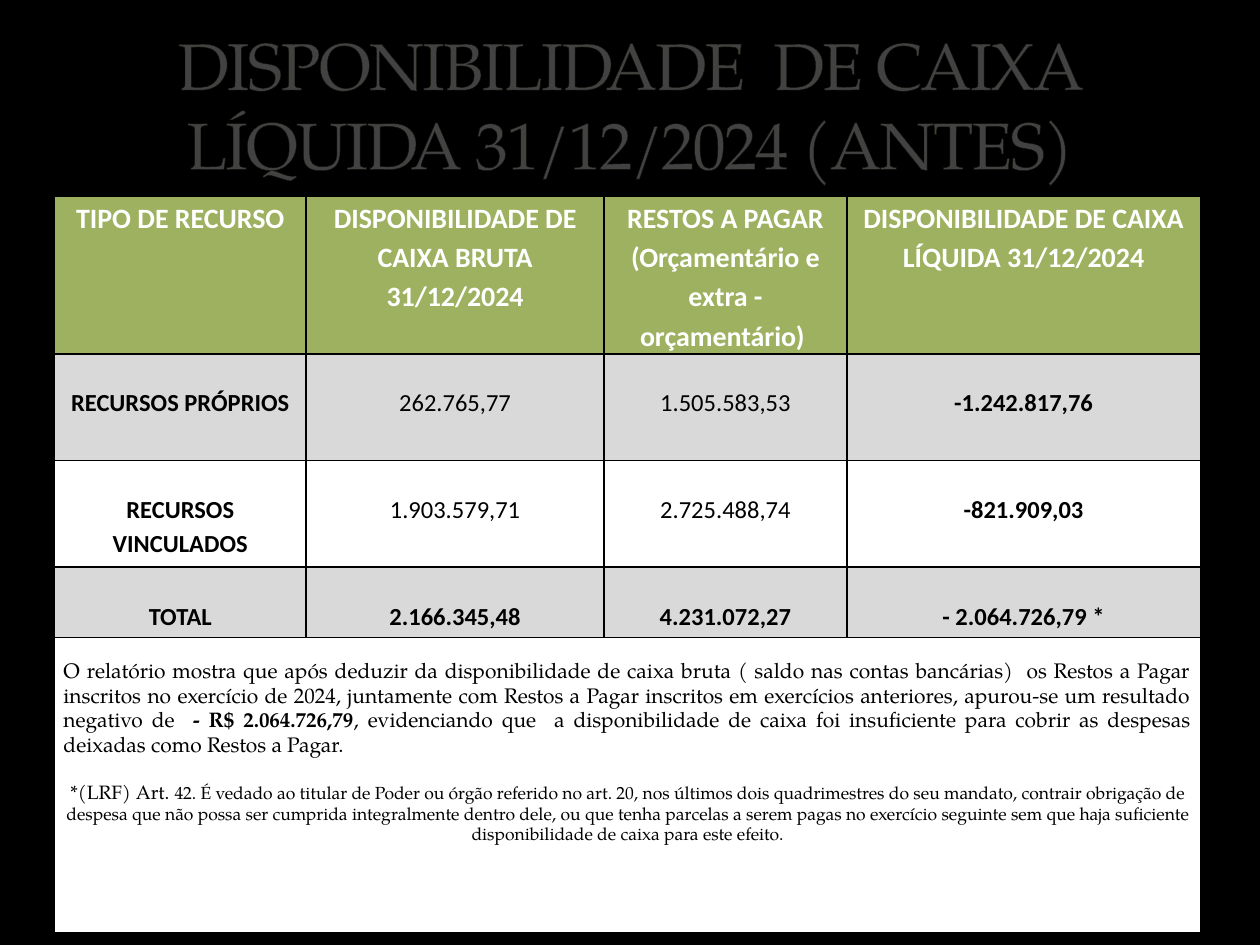
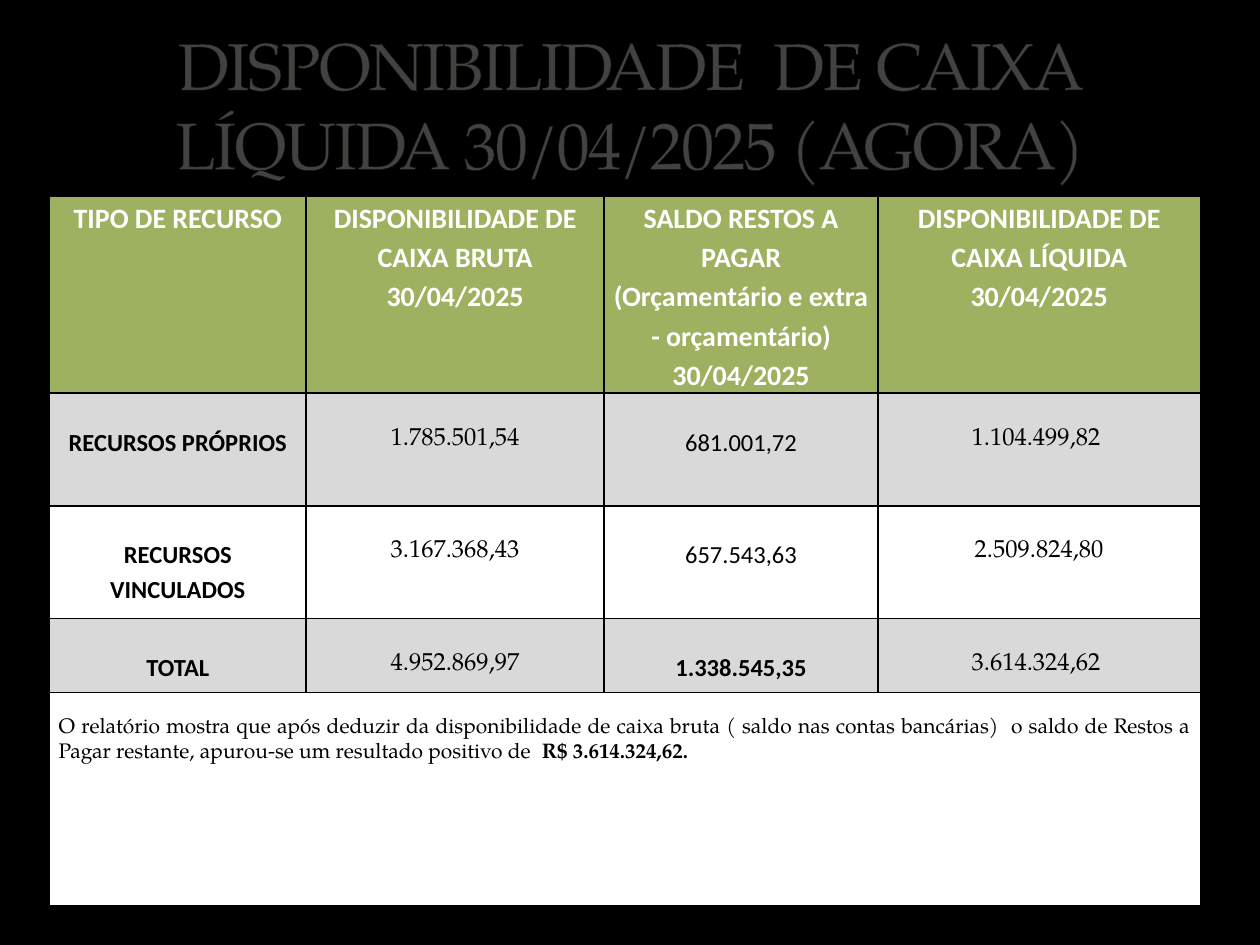
from lxml import etree
from pptx import Presentation
from pptx import util as u
from pptx.dml.color import RGBColor
from pptx.enum import text
from pptx.oxml.ns import qn

INK = {
    "night": "000000",
    "white": "FFFFFF",
    "green": "9EB160",
    "gray": "D9D9D9",
    "olive": "3C4422",
}
SANS = "Calibri"
SERIF = "TeX Gyre Pagella"
MID = text.PP_ALIGN.CENTER
FULL = text.PP_ALIGN.JUSTIFY
LABELS = ["RECURSOS PRÓPRIOS", "RECURSOS VINCULADOS", "TOTAL"]


def color(name):
    return RGBColor.from_string(INK[name])


def style(font, size, ink, face=SANS, bold=False):
    font.size = u.Pt(size)
    font.name = face
    font.bold = bold
    font.color.rgb = color(ink)


def add_fill(parent, ink, alpha=None):
    fill = etree.SubElement(parent, qn("a:solidFill"))
    tone = etree.SubElement(fill, qn("a:srgbClr"), val=INK[ink])
    if alpha:
        etree.SubElement(tone, qn("a:alpha"), val=str(alpha * 1000))


def add_title(slide, words):
    title = slide.shapes.title
    title.left, title.top = u.Cm(1.27), u.Cm(0.43)
    title.width, title.height = u.Cm(22.86), u.Cm(3.38)
    frame = title.text_frame
    frame.word_wrap = True
    frame.auto_size = text.MSO_AUTO_SIZE.NONE
    frame.vertical_anchor = text.MSO_ANCHOR.BOTTOM
    para = frame.paragraphs[0]
    para.alignment = MID
    run = para.add_run()
    run.text = words
    style(run.font, 37.8, "white", SERIF)
    props = run.font._element
    props.set("spc", "-100")
    line = etree.Element(qn("a:ln"), w="3175")
    add_fill(line, "olive", 25)
    props.insert(0, line)


def set_cell(cell, ink, top=0):
    cell.fill.solid()
    cell.fill.fore_color.rgb = color(ink)
    cell.margin_left = cell.margin_right = u.Cm(0.18)
    cell.margin_top, cell.margin_bottom = u.Cm(top), 0
    props = cell._tc.get_or_add_tcPr()
    for i, side in enumerate(("lnL", "lnR", "lnT", "lnB")):
        line = etree.Element(qn("a:" + side), w="12700")
        add_fill(line, "night")
        props.insert(i, line)


def add_para(frame, first, align=MID):
    para = frame.paragraphs[0] if first else frame.add_paragraph()
    para.alignment = align
    para.line_spacing = 1.15
    return para


def fill_head(cell, words):
    set_cell(cell, "green")
    for i, part in enumerate(words.split("\n")):
        para = add_para(cell.text_frame, i == 0)
        para.text = part
        style(para.font, 16, "white", bold=True)


def fill_value(cell, words, ink, face, bold):
    set_cell(cell, ink, 0.61)
    para = add_para(cell.text_frame, True)
    para.text = words
    style(para.font, 14, "night", face, bold)


def fill_note(cell, notes):
    set_cell(cell, "white", 0.46)
    for i, (align, runs) in enumerate(notes):
        para = add_para(cell.text_frame, i == 0, align)
        if i:
            para.space_before = u.Pt(14)
        for words, size, bold in runs:
            run = para.add_run()
            run.text = words
            style(run.font, size, "night", SERIF, bold)


def add_grid(slide, left, cols, rows, heads, values, look, notes):
    shape = slide.shapes.add_table(
        len(rows), len(cols), u.Cm(left), u.Cm(3.96),
        u.Cm(sum(cols)), u.Cm(sum(rows)))
    grid = shape.table
    for col, width in zip(grid.columns, cols):
        col.width = u.Cm(width)
    for row, height in zip(grid.rows, rows):
        row.height = u.Cm(height)
    for c, head in enumerate(heads):
        fill_head(grid.cell(0, c), head)
    for r, (label, line) in enumerate(zip(LABELS, values), 1):
        ink = "gray" if r % 2 else "white"
        for c, words in enumerate([label] + line):
            face, bold = look(r, c)
            fill_value(grid.cell(r, c), words, ink, face, bold)
    last = len(rows) - 1
    grid.cell(last, 0).merge(grid.cell(last, len(cols) - 1))
    fill_note(grid.cell(last, 0), notes)


def look_before(r, c):
    return SANS, c in (0, 3) or r == 3


def look_now(r, c):
    face = SANS if c in (0, 2) else SERIF
    return face, c == 0 or (r == 3 and c == 2)


def add_page(deck, title, **grid):
    slide = deck.slides.add_slide(deck.slide_layouts[5])
    slide.background.fill.solid()
    slide.background.fill.fore_color.rgb = color("night")
    add_title(slide, title)
    add_grid(slide, **grid)


def main():
    deck = Presentation()
    deck.slide_width, deck.slide_height = u.Cm(25.4), u.Cm(19.05)
    add_page(
        deck, "DISPONIBILIDADE  DE CAIXA LÍQUIDA 31/12/2024 (ANTES)",
        left=1.1, cols=[5.07, 6.01, 4.89, 7.13],
        rows=[3, 2.15, 2.15, 1.42, 5.94],
        heads=["TIPO DE RECURSO",
               "DISPONIBILIDADE DE CAIXA BRUTA 31/12/2024",
               "RESTOS A PAGAR\n(Orçamentário e extra - orçamentário) ",
               "DISPONIBILIDADE DE CAIXA LÍQUIDA 31/12/2024"],
        values=[["262.765,77", "1.505.583,53", "-1.242.817,76"],
                ["1.903.579,71", "2.725.488,74", "-821.909,03"],
                ["2.166.345,48", "4.231.072,27", "- 2.064.726,79 *"]],
        look=look_before,
        notes=[
            (FULL, [
                ("O relatório mostra que após deduzir da disponibilidade de "
                 "caixa bruta ( saldo nas contas bancárias)  os Restos a Pagar "
                 "inscritos no exercício de 2024, juntamente com Restos a Pagar "
                 "inscritos em exercícios anteriores, apurou-se um resultado "
                 "negativo de  ", 12, False),
                ("- R$ 2.064.726,79", 12, True),
                (", evidenciando que  a disponibilidade de caixa foi "
                 "insuficiente para cobrir as despesas deixadas como Restos a "
                 "Pagar.", 12, False)]),
            (MID, [
                ("*(LRF) Art. ", 11, False),
                ("42. É vedado ao titular de Poder ou órgão referido no art. "
                 "20, nos últimos dois quadrimestres do seu mandato, contrair "
                 "obrigação de despesa que não possa ser cumprida "
                 "integralmente dentro dele, ou que tenha parcelas a serem "
                 "pagas no exercício seguinte sem que haja suficiente "
                 "disponibilidade de caixa para este efeito.", 10, False)])])
    add_page(
        deck, "DISPONIBILIDADE  DE CAIXA LÍQUIDA 30/04/2025 (AGORA)",
        left=1, cols=[5.17, 6.01, 5.52, 6.5],
        rows=[2.34, 2.27, 2.27, 1.49, 4.3],
        heads=["TIPO DE RECURSO",
               "DISPONIBILIDADE DE CAIXA BRUTA 30/04/2025",
               "SALDO RESTOS A PAGAR\n"
               "(Orçamentário e extra - orçamentário) 30/04/2025",
               "DISPONIBILIDADE DE CAIXA LÍQUIDA 30/04/2025"],
        values=[["1.785.501,54", "681.001,72", "1.104.499,82 "],
                ["3.167.368,43", "657.543,63", "2.509.824,80"],
                ["4.952.869,97", "1.338.545,35", "3.614.324,62 "]],
        look=look_now,
        notes=[
            (FULL, [
                ("O relatório mostra que após deduzir da disponibilidade de "
                 "caixa bruta ( saldo nas contas bancárias)  o saldo de Restos "
                 "a Pagar restante, apurou-se um resultado positivo de  ",
                 12, False),
                ("R$ 3.614.324,62.", 12, True)])])
    deck.save("out.pptx")


if __name__ == "__main__":
    main()
